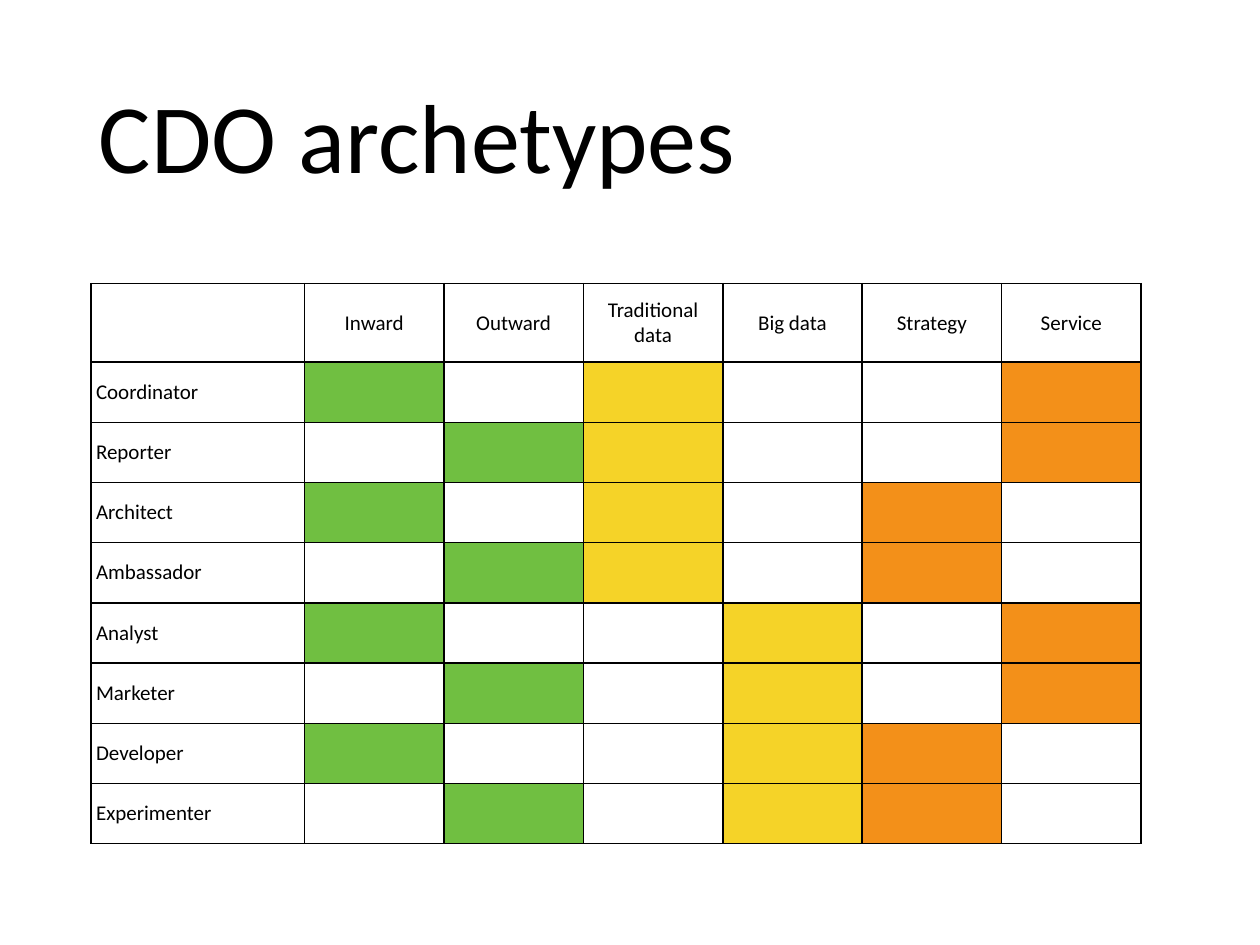
from dataclasses import dataclass

from lxml import etree
from pptx import Presentation
from pptx.dml.color import RGBColor
from pptx.enum.text import MSO_ANCHOR, PP_ALIGN
from pptx.oxml.ns import qn
from pptx.util import Pt

MIDDLE = MSO_ANCHOR.MIDDLE
LEFT, CENTER = PP_ALIGN.LEFT, PP_ALIGN.CENTER


@dataclass(frozen=True)
class Theme:
    font: str = "Calibri"
    title_size: int = 56
    cell_size: int = 12
    ink: str = "000000"
    paper: str = "FFFFFF"
    direction: str = "70BF41"
    data: str = "F5D328"
    focus: str = "F39019"


theme = Theme()


def style_text(para, size):
    para.font.size = Pt(size)
    for span in para.runs:
        span.font.name = theme.font
        span.font.size = Pt(size)
        span.font.color.rgb = RGBColor.from_string(theme.ink)


def add_borders(cell):
    properties = cell._tc.get_or_add_tcPr()
    for side in ("a:lnL", "a:lnR", "a:lnT", "a:lnB"):
        line = etree.SubElement(properties, qn(side), w=str(Pt(1)))
        fill = etree.SubElement(line, qn("a:solidFill"))
        etree.SubElement(fill, qn("a:srgbClr"), val=theme.ink)


deck = Presentation()
deck.slide_width, deck.slide_height = Pt(720), Pt(540)
page = deck.slides.add_slide(deck.slide_layouts[6])

# Title
title = page.shapes.add_textbox(Pt(49.5), Pt(28.75), Pt(621), Pt(104.4))
title.text_frame.word_wrap = True
title.text_frame.vertical_anchor = MIDDLE
title.text_frame.text = "CDO archetypes"
title_para = title.text_frame.paragraphs[0]
title_para.line_spacing = 0.9
style_text(title_para, theme.title_size)

# Each archetype picks one column from each of the three pairs
headings = ["", "Inward", "Outward", "Traditional data", "Big data", "Strategy", "Service"]
pair_colors = [theme.direction, theme.data, theme.focus]
archetypes = {
    "Coordinator": ("Inward", "Traditional data", "Service"),
    "Reporter": ("Outward", "Traditional data", "Service"),
    "Architect": ("Inward", "Traditional data", "Strategy"),
    "Ambassador": ("Outward", "Traditional data", "Strategy"),
    "Analyst": ("Inward", "Big data", "Service"),
    "Marketer": ("Outward", "Big data", "Service"),
    "Developer": ("Inward", "Big data", "Strategy"),
    "Experimenter": ("Outward", "Big data", "Strategy"),
}
names = ["", *archetypes]

# Table grid
name_width, trait_width = 122, 79.7
header_height, row_height = 45, 34.4
frame = page.shapes.add_table(
    len(names), len(headings), Pt(52), Pt(162),
    Pt(name_width + 6 * trait_width), Pt(header_height + 8 * row_height))
table = frame.table
table.first_row = table.horz_banding = False
for index, column in enumerate(table.columns):
    column.width = Pt(trait_width if index else name_width)
for index, row in enumerate(table.rows):
    row.height = Pt(row_height if index else header_height)

# Table cells
for row_index, name in enumerate(names):
    traits = archetypes.get(name, ())
    for column_index, heading in enumerate(headings):
        cell = table.cell(row_index, column_index)
        cell.vertical_anchor = MIDDLE
        cell.margin_left = cell.margin_right = Pt(2.9)
        cell.margin_top = cell.margin_bottom = Pt(2.9)
        if row_index == 0:
            cell.text_frame.text = heading
        elif column_index == 0:
            cell.text_frame.text = name
        para = cell.text_frame.paragraphs[0]
        para.alignment = CENTER if column_index else LEFT
        style_text(para, theme.cell_size)
        add_borders(cell)
        color = pair_colors[traits.index(heading)] if heading in traits else theme.paper
        cell.fill.solid()
        cell.fill.fore_color.rgb = RGBColor.from_string(color)

deck.save("out.pptx")
